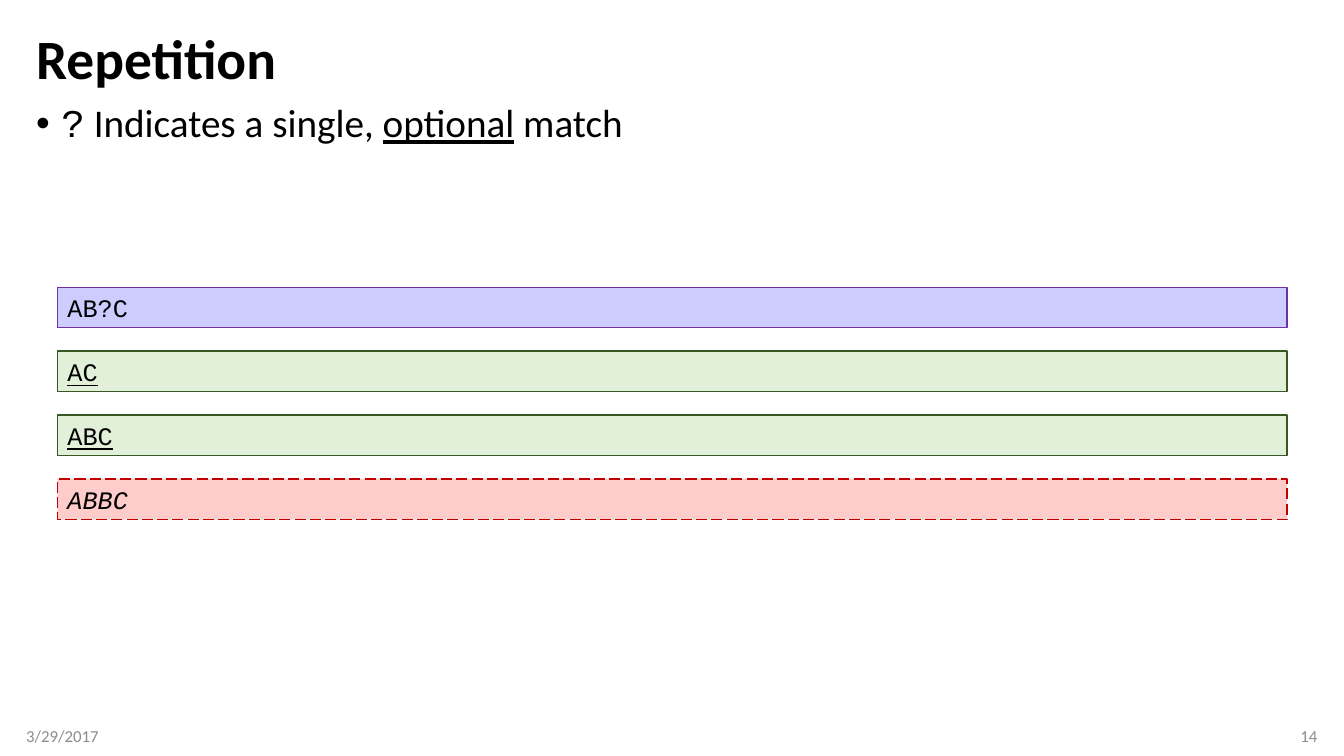
"""Build the slide on the optional-match operator of regular expressions."""
from lxml import etree
from pptx import Presentation
from pptx.dml.color import RGBColor
from pptx.enum.dml import MSO_LINE
from pptx.enum.shapes import MSO_SHAPE
from pptx.enum.text import MSO_ANCHOR, MSO_AUTO_SIZE, PP_ALIGN
from pptx.oxml.ns import qn
from pptx.util import Cm, Pt

RECTANGLE = MSO_SHAPE.RECTANGLE
SOLID, LONG_DASH = MSO_LINE.SOLID, MSO_LINE.LONG_DASH
TOP, MIDDLE = MSO_ANCHOR.TOP, MSO_ANCHOR.MIDDLE
LEFT, RIGHT = PP_ALIGN.LEFT, PP_ALIGN.RIGHT
NO_AUTOFIT = MSO_AUTO_SIZE.NONE

COLORS = {
    "text": "000000",
    "footer": "8C8C8C",
    "pattern fill": "CCCCFF",
    "pattern line": "7030A0",
    "match fill": "E2F0D9",
    "match line": "385723",
    "failure fill": "FFCCCC",
    "failure line": "C00000",
}
SANS, MONO = "Calibri", "Courier New"


def set_frame(shape, anchor=MIDDLE, alignment=LEFT, margin_left=0.25, margin_right=0.25):
    """Set up the text frame of a shape and return its first paragraph."""
    frame = shape.text_frame
    values = {
        "word_wrap": True, "auto_size": NO_AUTOFIT, "vertical_anchor": anchor,
        "margin_left": Cm(margin_left), "margin_right": Cm(margin_right),
        "margin_top": Cm(0.13), "margin_bottom": Cm(0.13),
    }
    for name, value in values.items():
        setattr(frame, name, value)
    paragraph = frame.paragraphs[0]
    paragraph.alignment = alignment
    return paragraph


def add_run(paragraph, text, size, font_name=SANS, color="text", **styles):
    """Append a formatted run to a paragraph."""
    run = paragraph.add_run()
    run.text = text
    values = {"name": font_name, "size": Pt(size), **styles}
    for name, value in values.items():
        setattr(run.font, name, value)
    run.font.color.rgb = RGBColor.from_string(COLORS[color])


presentation = Presentation()
presentation.slide_width, presentation.slide_height = Cm(33.87), Cm(19.05)
slide = presentation.slides.add_slide(presentation.slide_layouts[5])
shapes = slide.shapes

title = shapes.title
title_place = {"left": 0.66, "top": 0.64, "width": 32.54, "height": 1.83}
for name, value in title_place.items():
    setattr(title, name, Cm(value))
paragraph = set_frame(title)
paragraph.line_spacing = 0.9
add_run(paragraph, "Repetition", 39.6, bold=True)

body = shapes.add_textbox(Cm(0.66), Cm(2.49), Cm(32.54), Cm(0.94))
paragraph = set_frame(body, TOP)
paragraph.line_spacing = 0.9
paragraph.space_before = Pt(10)
properties = paragraph._p.get_or_add_pPr()
properties.set("marL", str(Cm(0.64)))
properties.set("indent", str(Cm(-0.64)))
etree.SubElement(properties, qn("a:buFont"), typeface="Arial")
etree.SubElement(properties, qn("a:buChar"), char="•")
add_run(paragraph, "?", 28, MONO)
add_run(paragraph, " Indicates a single, ", 28)
add_run(paragraph, "optional", 28, underline=True)
add_run(paragraph, " match", 28)

footers = [
    ("3/29/2017", 0.66, LEFT, 0, 0.25),
    ("14", 25.58, RIGHT, 0.25, 0),
]
for text, left, alignment, margin_left, margin_right in footers:
    footer = shapes.add_textbox(Cm(left), Cm(18.03), Cm(7.62), Cm(1.02))
    paragraph = set_frame(footer, MIDDLE, alignment, margin_left, margin_right)
    add_run(paragraph, text, 12, color="footer")

examples = [
    ("AB?C", "pattern", SOLID, {}),
    ("AC", "match", SOLID, {"underline": True}),
    ("ABC", "match", SOLID, {"underline": True}),
    ("ABBC", "failure", LONG_DASH, {"italic": True}),
]
for row, (text, role, dash, styles) in enumerate(examples):
    bar = shapes.add_shape(RECTANGLE, Cm(1.45), Cm(7.24 + 1.61 * row), Cm(30.99), Cm(1.02))
    bar.shadow.inherit = False
    bar.fill.solid()
    bar.fill.fore_color.rgb = RGBColor.from_string(COLORS[f"{role} fill"])
    bar.line.color.rgb = RGBColor.from_string(COLORS[f"{role} line"])
    bar.line.width = Pt(1)
    bar.line.dash_style = dash
    add_run(set_frame(bar), text, 18, MONO, **styles)

presentation.save("out.pptx")
